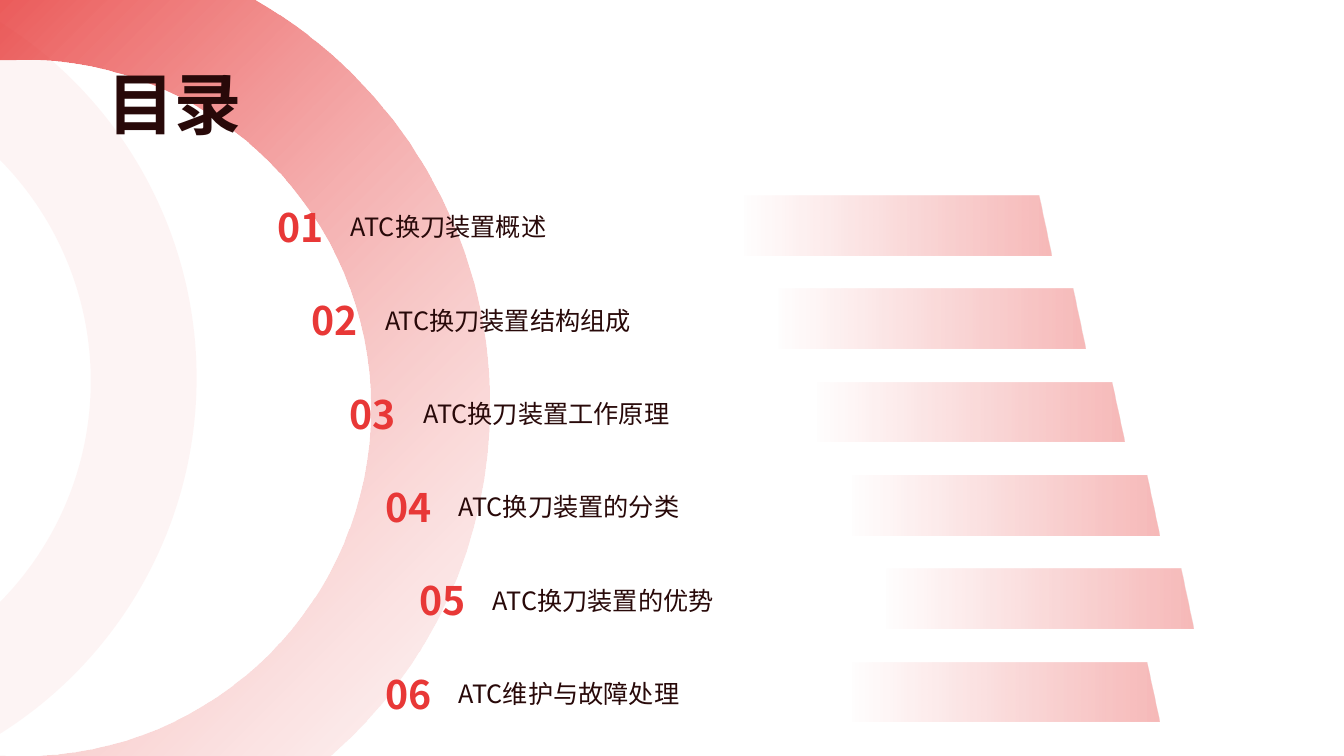
import math
from dataclasses import dataclass

from lxml import etree
from pptx import Presentation
from pptx import util as u
from pptx.dml import color as dml_color
from pptx.enum import shapes, text
from pptx.oxml.ns import qn

COLORS = {"red": "E83837", "pale": "FAD7D7", "ink": "280909"}
FONT = "Noto Sans CJK SC"
FRAME = {"word_wrap": True, "auto_size": text.MSO_AUTO_SIZE.NONE}
TITLE = {"size": u.Pt(48), "bold": True}
NUMBER = {"size": u.Pt(28), "bold": True}
LABEL = {"size": u.Pt(18), "bold": False}
FIRST_TOP, LAST_TOP = 1.94, 6.57

Point = tuple[float, float]
Segment = list[Point]  # one point for a line, three for a Bézier curve


@dataclass
class Arc:
    x: float
    y: float
    radius: float
    degrees: tuple[float, ...]

    def point(self, angle: float, pull: float = 0) -> Point:
        """Point on the arc, moved along its tangent by pull radii."""
        cos, sin = math.cos(angle), math.sin(angle)
        return (self.x + self.radius * (cos - pull * sin),
                self.y + self.radius * (sin + pull * cos))

    def segments(self) -> list[Segment]:
        angles = [math.radians(degree) for degree in self.degrees]
        result = [[self.point(angles[0])]]
        for start, end in zip(angles, angles[1:]):
            pull = 4 / 3 * math.tan((end - start) / 4)
            result.append([self.point(start, pull), self.point(end, -pull), self.point(end)])
        return result


@dataclass
class Stop:
    position: float
    color: str
    alpha: int


@dataclass
class Entry:
    label: str
    left: float


ENTRIES = [
    Entry("ATC换刀装置概述", 2.35),
    Entry("ATC换刀装置结构组成", 2.69),
    Entry("ATC换刀装置工作原理", 3.07),
    Entry("ATC换刀装置的分类", 3.42),
    Entry("ATC换刀装置的优势", 3.76),
    Entry("ATC维护与故障处理", 3.42),
]
RING_STOPS = [Stop(0, "red", 82), Stop(1, "pale", 29)]
BAR_STOPS = [Stop(0.62, "red", 0), Stop(1, "red", 35)]


def rgb(name: str) -> dml_color.RGBColor:
    return dml_color.RGBColor.from_string(COLORS[name])


def set_alphas(shape, alphas: list[int]) -> None:
    for color, alpha in zip(shape._element.spPr.xpath(".//a:srgbClr"), alphas):
        etree.SubElement(color, qn("a:alpha"), val=str(alpha * 1000))


def clear_effects(shape) -> None:
    shape.line.fill.background()
    shape.shadow.inherit = False


def fill_gradient(shape, stops: list[Stop], angle: float) -> None:
    shape.fill.gradient()
    shape.fill.gradient_angle = angle
    for target, stop in zip(shape.fill.gradient_stops, stops):
        target.position = stop.position
        target.color.rgb = rgb(stop.color)
    set_alphas(shape, [stop.alpha for stop in stops])


def add_outline(slide, segments: list[Segment]):
    corners = [(u.Inches(x), u.Inches(y)) for x, y in (segment[-1] for segment in segments)]
    builder = slide.shapes.build_freeform(*corners[0])
    builder.add_line_segments(corners[1:], close=True)
    shape = builder.convert_to_shape()
    # Bend the sides that are curves
    for line, segment in zip(shape._element.spPr.xpath(".//a:lnTo"), segments[1:]):
        if len(segment) == 3:
            curve = etree.Element(qn("a:cubicBezTo"))
            for x, y in segment:
                etree.SubElement(curve, qn("a:pt"), x=str(u.Inches(x) - shape.left),
                                 y=str(u.Inches(y) - shape.top))
            line.getparent().replace(line, curve)
    clear_effects(shape)
    return shape


def add_text(parent, box: tuple[float, ...], words: str, color: str, style: dict,
             anchor=text.MSO_ANCHOR.MIDDLE, align=text.PP_ALIGN.LEFT) -> None:
    shape = parent.shapes.add_textbox(*map(u.Inches, box))
    for name, value in {**FRAME, "vertical_anchor": anchor}.items():
        setattr(shape.text_frame, name, value)
    paragraph = shape.text_frame.paragraphs[0]
    paragraph.alignment = align
    run = paragraph.add_run()
    run.text = words
    for name, value in {**style, "name": FONT}.items():
        setattr(run.font, name, value)
    run.font.color.rgb = rgb(color)
    etree.SubElement(run.font._element, qn("a:ea"), typeface=FONT)


def add_entry(slide, number: int, entry: Entry, top: float) -> None:
    group = slide.shapes.add_group_shape()
    left = entry.left
    bar = group.shapes.add_shape(shapes.MSO_SHAPE.PARALLELOGRAM,
                                 *map(u.Inches, (left, top, 8.08, 0.59)))
    bar.adjustments[0] = 0.217
    bar._element.spPr.xfrm.set("flipH", "1")
    clear_effects(bar)
    fill_gradient(bar, BAR_STOPS, 180)
    add_text(group, (left + 1.03, top - 0.04, 7.05, 0.7), entry.label, "ink", LABEL)
    add_text(group, (left + 0.3, top + 0.01, 0.69, 0.6), f"{number:02}", "red", NUMBER)


def main() -> None:
    presentation = Presentation()
    presentation.slide_width = u.Inches(13.33)
    presentation.slide_height = u.Inches(7.5)
    slide = presentation.slides.add_slide(presentation.slide_layouts[6])

    # Large ring, cut off by the left edge
    outer = Arc(0.23, 4.02, 4.63, (-60.25, 0, 48.92)).segments()
    inner = Arc(0.23, 4.05, 3.45, (93.8, 90, 0, -90, -93.8)).segments()
    ring = add_outline(slide, [[(0, 0)], *outer, [(0, 7.51)], *inner])
    fill_gradient(ring, RING_STOPS, 315)

    # Faint crescent
    outer = Arc(-2.22, 3.75, 4.17, (-57.83, 0, 57.83)).segments()
    inner = Arc(-2.22, 3.78, 3.12, (44.64, 0, -44.64)).segments()
    crescent = add_outline(slide, outer + inner)
    crescent.fill.solid()
    crescent.fill.fore_color.rgb = rgb("red")
    set_alphas(crescent, [5])

    # Title
    add_text(slide, (0.86, 0.57, 1.74, 1.01), "目录", "ink", TITLE,
             text.MSO_ANCHOR.TOP, text.PP_ALIGN.CENTER)

    # Contents
    step = (LAST_TOP - FIRST_TOP) / (len(ENTRIES) - 1)
    for i, entry in enumerate(ENTRIES):
        add_entry(slide, i + 1, entry, FIRST_TOP + i * step)

    presentation.save("out.pptx")


if __name__ == "__main__":
    main()
